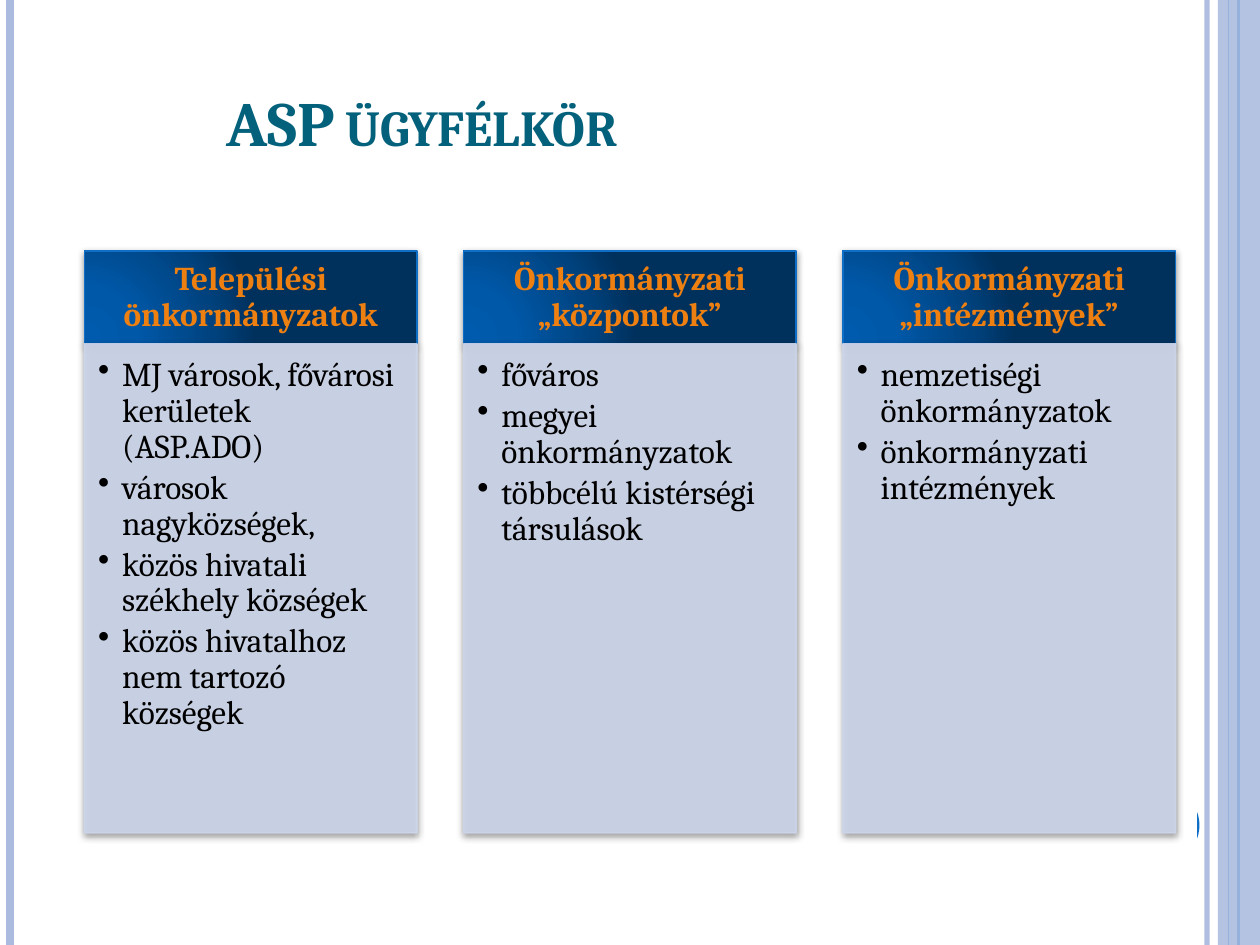
from dataclasses import dataclass

from lxml import etree
from pptx import Presentation
from pptx.dml.color import RGBColor
from pptx.enum.shapes import MSO_CONNECTOR, MSO_SHAPE
from pptx.enum.text import MSO_ANCHOR, MSO_AUTO_SIZE, PP_ALIGN
from pptx.oxml.ns import qn
from pptx.util import Inches, Pt

STRAIGHT = MSO_CONNECTOR.STRAIGHT
RECTANGLE, OVAL = MSO_SHAPE.RECTANGLE, MSO_SHAPE.OVAL
TOP, MIDDLE, BOTTOM = MSO_ANCHOR.TOP, MSO_ANCHOR.MIDDLE, MSO_ANCHOR.BOTTOM
LEFT, CENTER = PP_ALIGN.LEFT, PP_ALIGN.CENTER
NO_FIT = MSO_AUTO_SIZE.NONE

FONT = "Cambria"
COLORS = {
    "title": "04617B", "heading": "EE8012", "text": "000000", "white": "FFFFFF",
    "accent": "0F6FC6", "stripe": "ABBBDF", "panel": "CCD5EA", "shadow": "000000",
}
HEADER_GRADIENT = [(0, "005BAE"), (30, "0058A8"), (75, "00427E"), (100, "00315D")]
STRIPES = [(9.58, "stripe", 3, 93), (0.08, "stripe", 4.5, 100),
           (9.83, "accent", 1.5, 100), (9.75, "accent", 0.75, 100)]
COLUMNS = [
    ("Települési önkormányzatok",
     ["MJ városok, fővárosi kerületek (ASP.ADO)", "városok nagyközségek,",
      "közös hivatali székhely községek", "közös hivatalhoz nem tartozó községek"]),
    ("Önkormányzati „központok”",
     ["főváros", "megyei önkormányzatok", "többcélú kistérségi társulások"]),
    ("Önkormányzati „intézmények”",
     ["nemzetiségi önkormányzatok", "önkormányzati intézmények"]),
]


@dataclass
class Box:
    """A rectangle in inches."""
    left: float
    top: float
    width: float
    height: float

    def lengths(self):
        """Return the four lengths for python-pptx."""
        return [Inches(n) for n in (self.left, self.top, self.width, self.height)]


def add_node(parent, tag, **attributes):
    """Append a DrawingML element to a parent."""
    node = etree.SubElement(parent, qn(f"a:{tag}"))
    for name, value in attributes.items():
        node.set(name, str(value))
    return node


def paint(fill, holder, color, opacity=100):
    """Give a fill a solid colour with an opacity in percent."""
    fill.solid()
    fill.fore_color.rgb = RGBColor.from_string(COLORS[color])
    if opacity < 100:
        solid = holder.find(qn("a:solidFill"))
        add_node(solid[0], "alpha", val=opacity * 1000)


def add_panel(page, kind, box, fill, line=None, width=1, opacity=100):
    """Draw a filled shape without shadow."""
    shape = page.shapes.add_shape(kind, *box.lengths())
    shape.shadow.inherit = False
    paint(shape.fill, shape.element.spPr, fill, opacity)
    if line:
        shape.line.width = Pt(width)
        paint(shape.line.fill, shape.element.spPr.find(qn("a:ln")), line, opacity)
    else:
        shape.line.fill.background()
    return shape


def add_shadow(shape):
    """Put a soft shadow below a shape."""
    effects = shape.element.spPr.find(qn("a:effectLst"))
    shadow = add_node(effects, "outerShdw", blurRad=Pt(4), dist=Pt(1.6),
                      dir=90 * 60000, rotWithShape=0)
    color = add_node(shadow, "srgbClr", val=COLORS["shadow"])
    add_node(color, "alpha", val=42000)


def add_gradient(shape):
    """Swap the solid fill of a header for a circular gradient."""
    solid = shape.element.spPr.find(qn("a:solidFill"))
    gradient = etree.Element(qn("a:gradFill"), rotWithShape="1")
    stops = add_node(gradient, "gsLst")
    for position, color in HEADER_GRADIENT:
        add_node(add_node(stops, "gs", pos=position * 1000), "srgbClr", val=color)
    circle = add_node(gradient, "path", path="circle")
    add_node(circle, "fillToRect", l=5000, t=100000, r=120000, b=10000)
    solid.getparent().replace(solid, gradient)


def style_font(font, size, color, bold=False):
    """Set the face, size and colour of a font."""
    font.name, font.size, font.bold = FONT, Pt(size), bold
    font.color.rgb = RGBColor.from_string(COLORS[color])


def write_lines(shape, lines, insets, anchor, align, color, bold=False, bullet=False):
    """Write paragraphs into a shape."""
    frame = shape.text_frame
    frame.word_wrap, frame.vertical_anchor = True, anchor
    (frame.margin_left, frame.margin_top,
     frame.margin_right, frame.margin_bottom) = [Inches(n) for n in insets]
    frame.text = "\n".join(lines)
    for para in frame.paragraphs:
        para.alignment, para.line_spacing = align, 0.9
        if bullet:
            para.space_after = Pt(2.85)
            properties = para._p.get_or_add_pPr()
            properties.set("marL", str(Inches(0.19)))
            properties.set("indent", str(-Inches(0.19)))
            add_node(properties, "buChar", char="•")
        style_font(para.font, 19, color, bold)


def add_frame(page, box):
    """Draw the stripes at the page edges and the corner disc."""
    for x, color, width, opacity in STRIPES:
        line = page.shapes.add_connector(STRAIGHT, Inches(x), Inches(box.top),
                                         Inches(x), Inches(box.top + box.height))
        line.line.width = Pt(width)
        properties = line.element.spPr
        paint(line.line.fill, properties.find(qn("a:ln")), color, opacity)
        add_node(properties, "effectLst")
    band = box.width / 30
    add_panel(page, RECTANGLE, Box(box.width - band, box.top, band, box.height),
              "stripe", opacity=87)
    add_panel(page, OVAL, Box(8.92, 6.25, 0.6, 0.6), "accent")
    add_panel(page, RECTANGLE, Box(8.78, 6.19, 0.71, 0.71), "white", "white", 2)


def add_title(page, box):
    """Place the slide title in small capitals."""
    title = page.shapes.title
    title.left, title.top, title.width, title.height = box.lengths()
    frame = title.text_frame
    frame.text = "ASP ügyfélkör"
    frame.word_wrap, frame.auto_size = True, NO_FIT
    frame.vertical_anchor = BOTTOM
    para = frame.paragraphs[0]
    para.alignment = CENTER
    style_font(para.font, 36, "title", True)
    para.font._element.set("cap", "small")


def add_column(page, box, heading, items):
    """Draw one client group: a header above a bulleted panel."""
    header_height = box.height * 0.16
    header = add_panel(page, RECTANGLE, Box(box.left, box.top, box.width, header_height),
                       "accent", "accent")
    add_gradient(header)
    add_shadow(header)
    write_lines(header, [heading], (0.15, 0.08, 0.15, 0.08), MIDDLE, CENTER,
                "heading", bold=True)
    body = add_panel(page, RECTANGLE,
                     Box(box.left, box.top + header_height, box.width,
                         box.height - header_height), "panel", "panel", opacity=90)
    add_shadow(body)
    write_lines(body, items, (0.11, 0.11, 0.15, 0.17), TOP, LEFT, "text", bullet=True)


def add_columns(page, box, gap=0.37):
    """Spread the client groups evenly over a box."""
    width = (box.width - gap * (len(COLUMNS) - 1)) / len(COLUMNS)
    for index, (heading, items) in enumerate(COLUMNS):
        left = box.left + index * (width + gap)
        add_column(page, Box(left, box.top, width, box.height), heading, items)


def main():
    """Build and save the deck."""
    deck = Presentation()
    deck.slide_width, deck.slide_height = Inches(10), Inches(7.5)
    page = deck.slides.add_slide(deck.slide_layouts[5])
    add_frame(page, Box(0, 0, 10, 7.5))
    add_title(page, Box(-1.06, 0.6, 8.82, 0.71))
    add_columns(page, Box(0.67, 1.99, 8.66, 4.62))
    deck.save("out.pptx")


if __name__ == "__main__":
    main()
